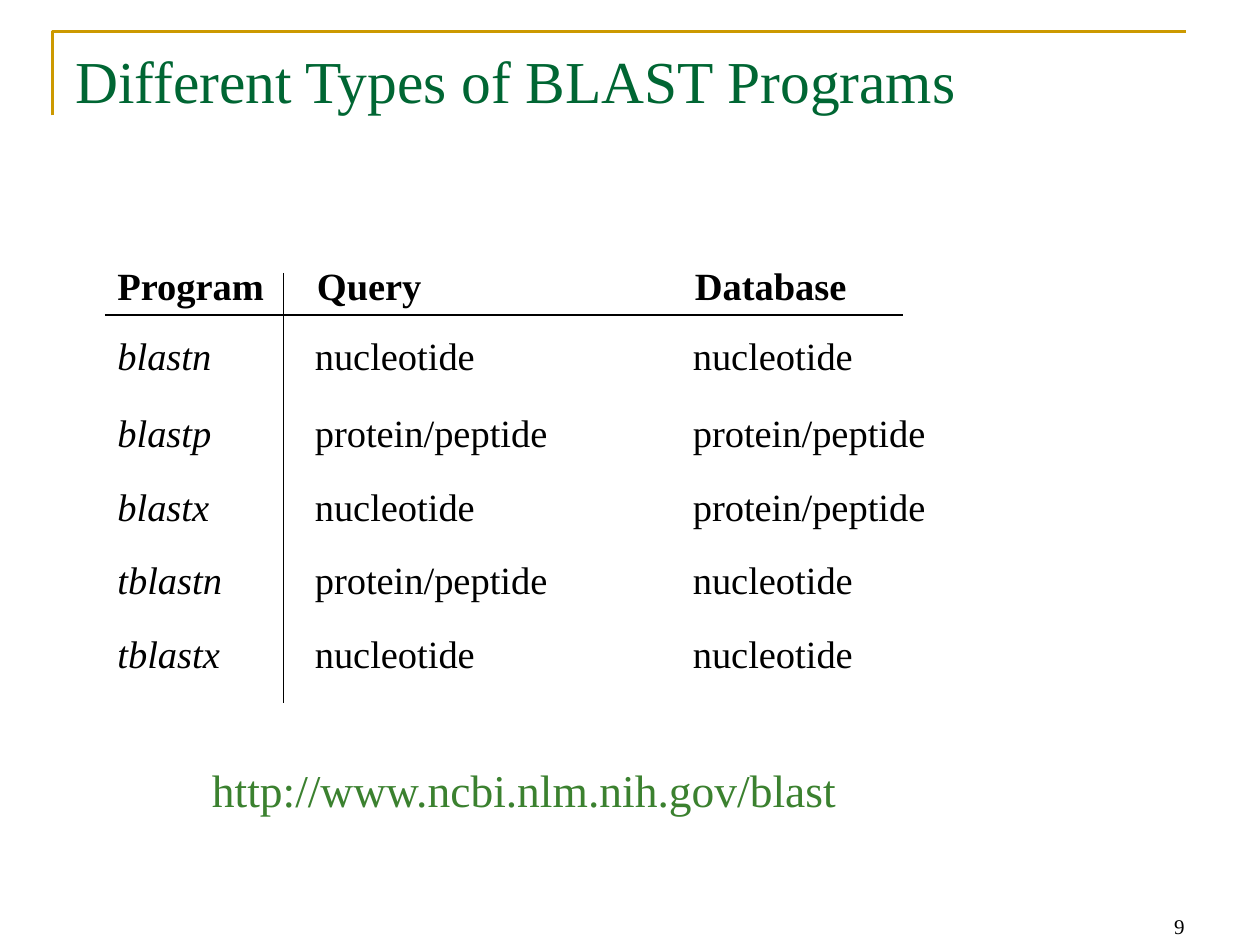
"""Build a slide that lists the types of BLAST programs."""
from lxml.etree import SubElement
from pptx import Presentation
from pptx.dml.color import RGBColor
from pptx.enum.shapes import MSO_CONNECTOR
from pptx.enum.text import MSO_ANCHOR, PP_ALIGN
from pptx.oxml.ns import qn
from pptx.util import Pt

BLACK = RGBColor(0x00, 0x00, 0x00)
GOLD = RGBColor(0xCC, 0x99, 0x00)
DARK_GREEN = RGBColor(0x00, 0x66, 0x33)
GREEN = RGBColor(0x3B, 0x81, 0x2F)
FONT = "Times New Roman"

TITLE = "Different Types of BLAST Programs"
ADDRESS = "http://www.ncbi.nlm.nih.gov/blast"
PAGE_NUMBER = "9"
HEADINGS = ["Program", "Query", "Database"]
PROGRAMS = [
    ("blastn", "nucleotide", "nucleotide"),
    ("blastp", "protein/peptide", "protein/peptide"),
    ("blastx", "nucleotide", "protein/peptide"),
    ("tblastn", "protein/peptide", "nucleotide"),
    ("tblastx", "nucleotide", "nucleotide"),
]

HEADING_LEFTS = [60, 174, 390]
COLUMN_LEFTS = [60, 172.8, 388.8]
COLUMN_WIDTHS = [112, 187, 187]
HEADING_TOP = 146
FIRST_ROW_TOP = 186
SECOND_ROW_TOP = 230.4
ROW_PITCH = 42
ROW_HEIGHT = 34
CORNER = [(30, 66), (30, 18), (678, 18)]
RULES = [((162, 156), (162, 402)), ((60, 180), (516, 180))]


def add_text(slide, text, box, size, color=BLACK, bold=False, italic=False,
             align=PP_ALIGN.LEFT, anchor=MSO_ANCHOR.TOP):
    frame = slide.shapes.add_textbox(*map(Pt, box)).text_frame
    frame.word_wrap = True
    frame.vertical_anchor = anchor
    frame.text = text
    paragraph = frame.paragraphs[0]
    paragraph.alignment = align
    font = paragraph.runs[0].font
    font.name, font.size = FONT, Pt(size)
    font.bold, font.italic = bold, italic
    font.color.rgb = color


def add_corner(slide):
    start, *others = [(Pt(x), Pt(y)) for x, y in CORNER]
    builder = slide.shapes.build_freeform(*start)
    builder.add_line_segments(others, close=False)
    corner = builder.convert_to_shape()
    corner.shadow.inherit = False
    corner.fill.background()
    corner.line.color.rgb = GOLD
    corner.line.width = Pt(1.5)


def add_rule(slide, start, end):
    rule = slide.shapes.add_connector(
        MSO_CONNECTOR.STRAIGHT, *map(Pt, start + end))
    rule.line.color.rgb = BLACK
    rule.line.width = Pt(0.75)
    SubElement(rule._element.spPr, qn("a:effectLst"))


def add_programs(slide):
    for heading, left, width in zip(HEADINGS, HEADING_LEFTS, COLUMN_WIDTHS):
        add_text(slide, heading, (left, HEADING_TOP, width, ROW_HEIGHT), 22,
                 bold=True)
    tops = [FIRST_ROW_TOP] + [
        SECOND_ROW_TOP + ROW_PITCH * i for i in range(len(PROGRAMS) - 1)]
    for program, top in zip(PROGRAMS, tops):
        for column, entry in enumerate(program):
            box = (COLUMN_LEFTS[column], top, COLUMN_WIDTHS[column], ROW_HEIGHT)
            add_text(slide, entry, box, 22, italic=column == 0)
    for start, end in RULES:
        add_rule(slide, start, end)


def main():
    presentation = Presentation()
    presentation.slide_width, presentation.slide_height = Pt(720), Pt(540)
    slide = presentation.slides.add_slide(presentation.slide_layouts[6])
    add_corner(slide)
    add_text(slide, PAGE_NUMBER, (516, 504, 168, 36), 12,
             align=PP_ALIGN.RIGHT, anchor=MSO_ANCHOR.BOTTOM)
    add_text(slide, TITLE, (36, 21.6, 648, 90), 34, DARK_GREEN)
    add_programs(slide)
    add_text(slide, ADDRESS, (114, 432, 492, 38), 26, GREEN)
    presentation.save("out.pptx")


if __name__ == "__main__":
    main()
